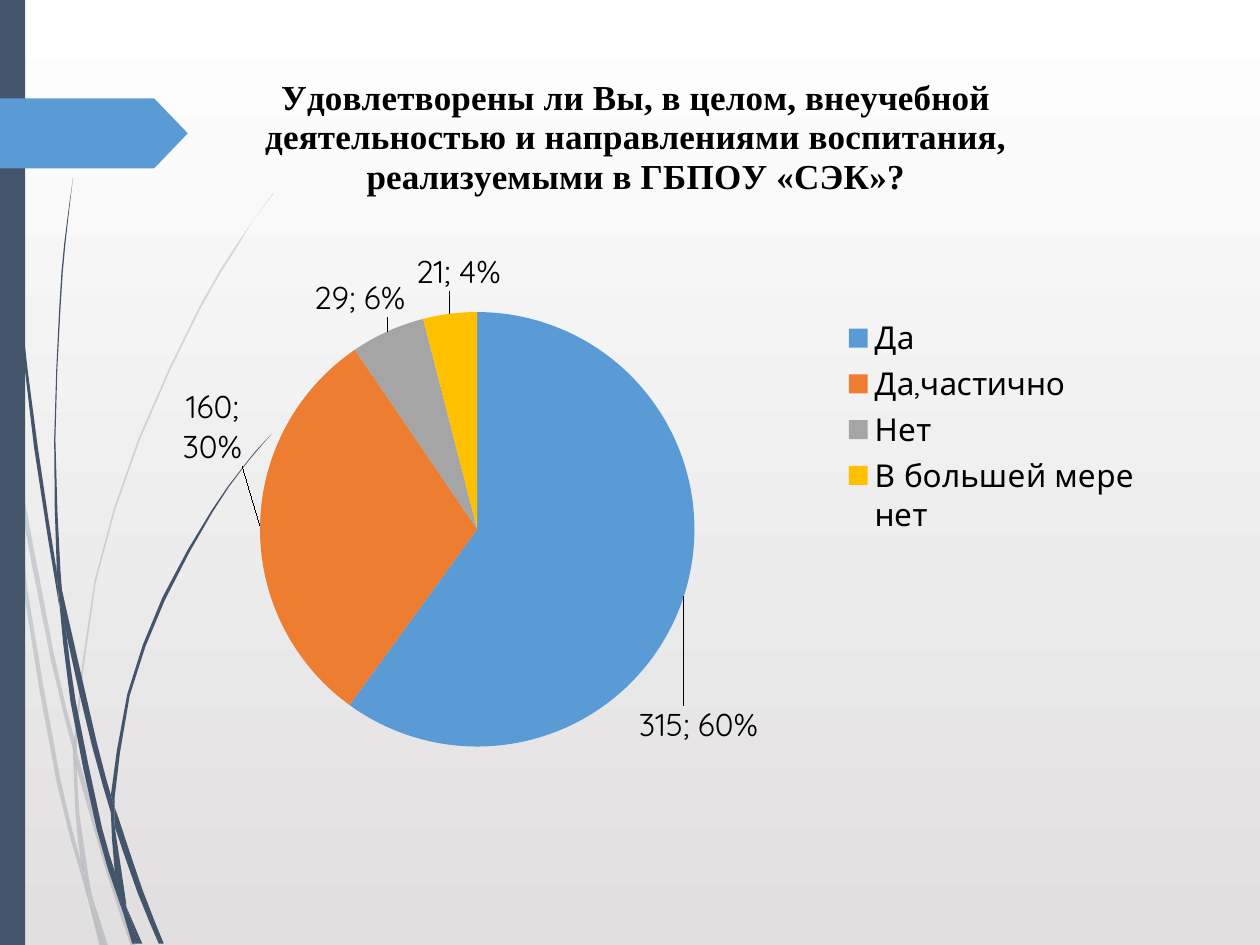
"""Builds a survey slide with a pie chart beside a decorative grass motif."""
import dataclasses

import lxml.etree
import pptx
import pptx.chart.data
import pptx.dml.color
import pptx.enum.chart
import pptx.enum.shapes
import pptx.oxml.ns
import pptx.util

QUESTION = ("Удовлетворены ли Вы, в целом, внеучебной деятельностью и "
            "направлениями воспитания, реализуемыми в ГБПОУ «СЭК»?")
ANSWERS = {"Да": 315, "Да,частично": 160, "Нет": 29, "В большей мере нет": 21}
LABEL_SHIFTS = [(-0.05, 0.14), (-0.01, -0.13), (0.02, -0.01), (0.05, -0.02)]
GRID = 0.72
PALE_STRANDS = [
    [[(8, 350), (6, 322), (0, 282)], [(0, 299), (7, 344)]],
    [[(10, 345), (12, 376), (40, 522), (59, 599)], [(59, 586), (43, 520), (10, 345)]],
    [[(61, 610), (85, 694), (104, 751)], [(108, 751), (88, 692), (64, 607), (61, 596)]],
    [[(73, 711), (83, 751)], [(86, 751), (73, 711)]],
    [[(8, 350), (19, 470), (45, 621), (64, 693), (70, 714)],
     [(69, 707), (64, 683), (48, 619), (22, 469), (12, 376), (8, 350)]],
    [[(58, 599), (60, 646), (64, 683), (67, 692), (73, 711)],
     [(72, 706), (63, 646), (61, 610), (58, 599)]],
    [[(217, 153), (201, 175), (186, 197), (158, 244), (110, 348), (75, 461), (59, 586)],
     [(61, 596)],
     [(61, 584), (76, 462), (111, 349), (159, 245), (187, 198), (201, 175), (217, 154)]],
    [[(70, 714), (79, 751)], [(82, 751), (70, 714)]],
    [[(58, 599), (61, 610)], [(61, 596), (59, 586)]],
    [[(65, 683), (70, 714), (82, 751)], [(83, 751), (73, 711), (67, 692), (65, 683)]],
]
DARK_STRANDS = [
    [[(2, 0), (3, 48), (5, 110), (14, 233), (27, 355), (47, 481)],
     [(45, 453), (30, 355), (15, 232), (6, 109), (4, 48), (3, 0)]],
    [[(50, 472), (53, 505), (73, 592), (88, 645)], [(88, 631), (77, 590), (50, 472)]],
    [[(91, 656), (109, 708), (126, 749)], [(130, 749), (113, 706), (94, 649), (91, 641)]],
    [[(47, 477), (56, 557), (77, 659), (92, 708), (97, 722)],
     [(96, 717), (91, 691), (81, 657), (60, 556), (53, 505), (47, 477)]],
    [[(58, 141), (51, 193), (47, 245), (43, 349), (45, 449), (49, 472)],
     [(50, 472), (48, 453), (44, 349), (48, 245), (52, 193), (58, 141)]],
    [[(100, 719), (110, 749)], [(113, 749), (100, 719)]],
    [[(45, 453), (47, 477), (53, 505)], [(50, 472), (45, 449)]],
    [[(216, 344), (203, 358), (191, 373), (168, 405), (129, 474), (101, 551), (88, 631)],
     [(91, 641)],
     [(91, 633), (103, 552), (131, 476), (169, 406), (191, 374), (203, 359), (216, 344)]],
    [[(97, 722), (105, 749)], [(108, 749), (97, 722)]],
    [[(88, 645), (91, 691), (100, 719)], [(100, 716), (91, 656), (88, 645)]],
    [[(88, 645), (91, 656)], [(91, 641), (88, 631)]],
    [[(91, 691), (97, 722), (108, 749)], [(110, 749), (100, 719), (96, 706), (91, 691)]],
]


@dataclasses.dataclass(frozen=True)
class Theme:
    """Colours, fonts and type sizes."""
    navy: str = "44546A"
    blue: str = "5B9BD5"
    black: str = "000000"
    backdrop: tuple = ("FFFFFF", "E1DFDF")
    slices: tuple = ("5B9BD5", "ED7D31", "A5A5A5", "FFC000")
    body_font: str = "Quicksand"
    title_font: str = "Times New Roman"
    body_size: int = 18
    title_size: int = 20


def colour(value):
    """Return the colour object for a hex value."""
    return pptx.dml.color.RGBColor.from_string(value)


def format_font(font, name, size, ink, bold=False):
    """Apply a typeface, size, colour and weight to a font."""
    font.name, font.size, font.bold = name, pptx.util.Pt(size), bold
    font.color.rgb = colour(ink)


def write_text(frame, text, **style):
    """Write one formatted paragraph into a text frame."""
    span = frame.paragraphs[0].add_run()
    span.text = text
    format_font(span.font, **style)


def smooth_side(points):
    """Return the points with one more on the curve between each pair."""
    padded = [points[0], *points, points[-1]]
    curve = [points[0]]
    for before, start, end, after in zip(padded, padded[1:], padded[2:], padded[3:]):
        if len(points) > 2:
            curve.append(tuple((9 * (b + c) - a - d) / 16
                               for a, b, c, d in zip(before, start, end, after)))
        curve.append(end)
    return curve


def set_layout(element, index, **settings):
    """Give a chart part a manual layout in fractions of the chart."""
    qn = pptx.oxml.ns.qn
    for old in element.findall(qn("c:layout")):
        element.remove(old)
    layout = lxml.etree.Element(qn("c:layout"))
    manual = lxml.etree.SubElement(layout, qn("c:manualLayout"))
    for tag, value in settings.items():
        lxml.etree.SubElement(manual, qn("c:" + tag)).set("val", str(value))
    element.insert(index, layout)


class SlideBuilder:
    """Holds the theme and the current page."""

    def __init__(self, page, theme):
        """Keep the page and theme."""
        self.page, self.theme = page, theme

    def paint_background(self):
        """Fill the page with a vertical gradient."""
        fill = self.page.background.fill
        fill.gradient()
        fill.gradient_angle = 270
        for stop, value in zip(fill.gradient_stops, self.theme.backdrop):
            stop.color.rgb = colour(value)

    def paint_shape(self, shape, value, opacity=100):
        """Give a shape a plain fill without line or shadow."""
        shape.shadow.inherit = False
        shape.line.fill.background()
        shape.fill.solid()
        shape.fill.fore_color.rgb = colour(value)
        if opacity < 100:
            qn = pptx.oxml.ns.qn
            tint = shape.element.spPr.find(qn("a:solidFill"))[0]
            lxml.etree.SubElement(tint, qn("a:alpha")).set("val", str(opacity * 1000))

    def add_strand(self, sides, opacity=100):
        """Draw a blade of grass bounded by smooth sides."""
        unit = pptx.util.Pt(GRID)
        outline = [(x * unit, y * unit) for side in sides for x, y in smooth_side(side)]
        builder = self.page.shapes.build_freeform(*outline[0], scale=1.0)
        builder.add_line_segments(outline[1:], close=True)
        self.paint_shape(builder.convert_to_shape(), self.theme.navy, opacity)

    def add_block(self, kind, bounds, value):
        """Draw a preset shape."""
        block = self.page.shapes.add_shape(kind, *map(pptx.util.Pt, bounds))
        self.paint_shape(block, value)
        return block

    def add_pie(self, bounds, title, values):
        """Draw the pie chart with title, legend and labels."""
        theme, qn = self.theme, pptx.oxml.ns.qn
        data = pptx.chart.data.CategoryChartData()
        data.categories = list(values)
        data.add_series(title, list(values.values()))
        chart = self.page.shapes.add_chart(
            pptx.enum.chart.XL_CHART_TYPE.PIE, *map(pptx.util.Pt, bounds), data).chart
        format_font(chart.font, theme.body_font, theme.body_size, theme.black)
        chart.has_title = chart.has_legend = True
        write_text(chart.chart_title.text_frame, title, name=theme.title_font,
                   size=theme.title_size, ink=theme.black, bold=True)
        chart.legend.position = pptx.enum.chart.XL_LEGEND_POSITION.RIGHT
        chart.legend.include_in_layout = False
        plot = chart.plots[0]
        plot.vary_by_categories = True
        series = plot.series[0]
        outside = pptx.enum.chart.XL_LABEL_POSITION.OUTSIDE_END
        labels = series.data_labels
        labels.show_value = labels.show_percentage = True
        labels.position = outside
        for index, value in enumerate(theme.slices):
            point = series.points[index]
            point.format.fill.solid()
            point.format.fill.fore_color.rgb = colour(value)
            point.data_label.position = outside
        for label, (x, y) in zip(series._element.iter(qn("c:dLbl")), LABEL_SHIFTS):
            label.find(qn("c:showPercent")).set("val", "1")
            set_layout(label, 1, x=x, y=y)
        for flag in list(series._element.iter(qn("c:showBubbleSize"))):
            separator = lxml.etree.Element(qn("c:separator"))
            separator.text = "; "
            flag.addnext(separator)
        body = chart._chartSpace.find(qn("c:chart"))
        edge = {"xMode": "edge", "yMode": "edge"}
        set_layout(body.find(qn("c:title")), 1, **edge, x=0.14, y=0.03)
        set_layout(body.find(qn("c:plotArea")), 0, layoutTarget="inner", **edge,
                   x=0.14, y=0.35, w=0.42, h=0.57)
        set_layout(body.find(qn("c:legend")), 1, **edge, x=0.7, y=0.35, w=0.29, h=0.3)


def main():
    """Build and save the deck."""
    deck = pptx.Presentation()
    deck.slide_width, deck.slide_height = pptx.util.Pt(720), pptx.util.Pt(540)
    theme = Theme()
    slide = SlideBuilder(deck.slides.add_slide(deck.slide_layouts[6]), theme)
    shapes = pptx.enum.shapes.MSO_SHAPE
    slide.paint_background()
    for strands, opacity in ((PALE_STRANDS, 20), (DARK_STRANDS, 100)):
        for sides in strands:
            slide.add_strand(sides, opacity)
    slide.add_block(shapes.RECTANGLE, (0, 0, 14.4, 540), theme.navy)
    arrow = slide.add_block(shapes.PENTAGON, (0, 56.2, 107.3, 40), theme.blue)
    arrow.adjustments[0] = 0.48
    slide.add_pie((64.8, 25.9, 594, 435.6), QUESTION, ANSWERS)
    deck.save("out.pptx")


if __name__ == "__main__":
    main()
